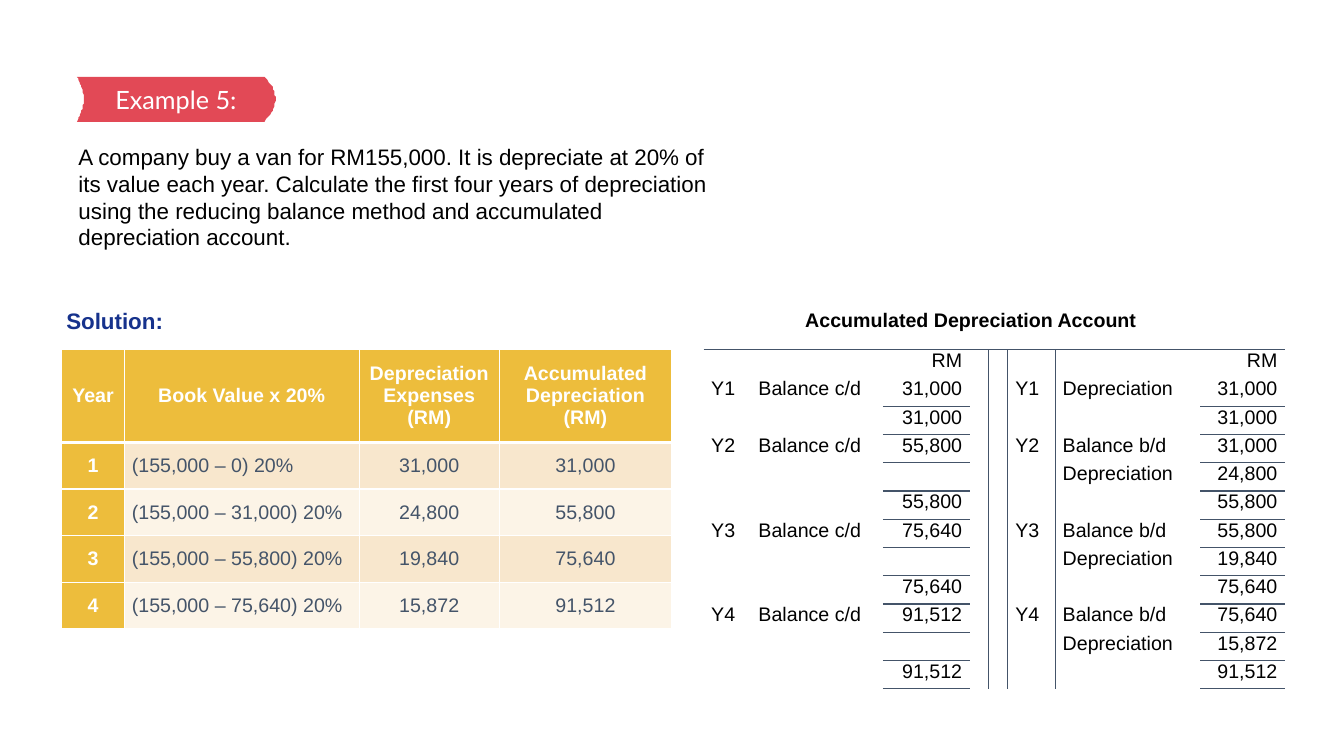
from lxml.etree import SubElement
from pptx import Presentation
from pptx.dml.color import RGBColor
from pptx.enum.text import MSO_ANCHOR, PP_ALIGN
from pptx.oxml.ns import qn
from pptx.util import Pt

COLORS = {"red": "E24956", "gold": "EDBD3C", "sand": "F8E7CD", "cream": "FCF4E7",
          "slate": "445469", "navy": "16328C", "white": "FFFFFF", "black": "000000"}
LEFT, CENTER, RIGHT = PP_ALIGN.LEFT, PP_ALIGN.CENTER, PP_ALIGN.RIGHT
PLAIN_STYLE = "{2D5ABB26-0587-4C30-8999-92F81FD0307C}"

TITLE = "Example 5:"
QUESTION = ("A company buy a van for RM155,000. It is depreciate at 20% of its value each year. "
            "Calculate the first four years of depreciation using the reducing balance method "
            "and accumulated depreciation account.")
SOLUTION = "Solution:"
ACCOUNT = "Accumulated Depreciation Account"
SCHEDULE = [
    ("Year", "Book Value x 20%", "Depreciation Expenses (RM)", "Accumulated Depreciation (RM)"),
    ("1", "(155,000 – 0) 20%", "31,000", "31,000"),
    ("2", "(155,000 – 31,000) 20%", "24,800", "55,800"),
    ("3", "(155,000 – 55,800) 20%", "19,840", "75,640"),
    ("4", "(155,000 – 75,640) 20%", "15,872", "91,512"),
]
DEBIT = [
    ("", "", "RM"),
    ("Y1", "Balance c/d", "31,000"), ("", "", "31,000"),
    ("Y2", "Balance c/d", "55,800"), ("", "", ""), ("", "", "55,800"),
    ("Y3", "Balance c/d", "75,640"), ("", "", ""), ("", "", "75,640"),
    ("Y4", "Balance c/d", "91,512"), ("", "", ""), ("", "", "91,512"),
]
CREDIT = [
    ("", "", "RM"),
    ("Y1", "Depreciation", "31,000"), ("", "", "31,000"),
    ("Y2", "Balance b/d", "31,000"), ("", "Depreciation", "24,800"), ("", "", "55,800"),
    ("Y3", "Balance b/d", "55,800"), ("", "Depreciation", "19,840"), ("", "", "75,640"),
    ("Y4", "Balance b/d", "75,640"), ("", "Depreciation", "15,872"), ("", "", "91,512"),
]
LEDGER = [debit + ("", "") + credit for debit, credit in zip(DEBIT, CREDIT)]
SCHEDULE_WIDTHS = [44.6, 167.8, 100.1, 123.1]
SCHEDULE_HEIGHTS = [66.2] + [33.3] * 4
LEDGER_WIDTHS = [33.8, 94.3, 62, 13.6, 13.6, 33.8, 103.7, 60.5]
LEDGER_HEIGHTS = [20.2] * len(LEDGER)
AMOUNT_COLUMNS = (2, 7)


def color(name):
    return RGBColor.from_string(COLORS[name])


def write(para, text, size, tone, bold=False, align=LEFT, face="Arial"):
    para.alignment = align
    span = para.add_run()
    span.text = text
    span.font.name, span.font.size, span.font.bold = face, Pt(size), bold
    span.font.color.rgb = color(tone)


def place_text(page, text, left, top, width, height, size, tone, bold=False, fill=None):
    box = page.shapes.add_textbox(Pt(left), Pt(top), Pt(width), Pt(height))
    if fill:
        box.fill.solid()
        box.fill.fore_color.rgb = color(fill)
    box.text_frame.word_wrap = True
    write(box.text_frame.paragraphs[0], text, size, tone, bold)


def set_border(cell, side, tone, width):
    properties = cell._tc.get_or_add_tcPr()
    line = SubElement(properties, qn("a:ln" + side), w=str(Pt(width)))
    solid = SubElement(line, qn("a:solidFill"))
    SubElement(solid, qn("a:srgbClr"), val=COLORS[tone])


def place_table(page, rows, left, top, widths, heights):
    frame = page.shapes.add_table(len(rows), len(widths), Pt(left), Pt(top),
                                  Pt(sum(widths)), Pt(sum(heights)))
    table = frame.table
    table._tbl.tblPr.find(qn("a:tableStyleId")).text = PLAIN_STYLE
    table.horz_banding = False
    for column, width in zip(table.columns, widths):
        column.width = Pt(width)
    for row, height in zip(table.rows, heights):
        row.height = Pt(height)
    for cell in table.iter_cells():
        cell.margin_left = cell.margin_right = Pt(5.4)
        cell.margin_top = cell.margin_bottom = 0
    return table


def place_schedule(page):
    table = place_table(page, SCHEDULE, 44.2, 249.8, SCHEDULE_WIDTHS, SCHEDULE_HEIGHTS)
    for r, row in enumerate(SCHEDULE):
        for c, text in enumerate(row):
            cell = table.cell(r, c)
            heading = r == 0 or c == 0
            for side in "LRTB":
                thick = (r == 0 and side == "B") or (r == 1 and side == "T")
                set_border(cell, side, "white", 3 if thick else 1)
            cell.fill.solid()
            cell.fill.fore_color.rgb = color("gold" if heading else "sand" if r % 2 else "cream")
            cell.vertical_anchor = MSO_ANCHOR.MIDDLE
            write(cell.text_frame.paragraphs[0], text, 14, "white" if heading else "slate",
                  heading, CENTER if heading or c > 1 else LEFT)


def place_ledger(page):
    table = place_table(page, LEDGER, 502.6, 249.8, LEDGER_WIDTHS, LEDGER_HEIGHTS)
    for r, row in enumerate(LEDGER):
        for c, text in enumerate(row):
            cell = table.cell(r, c)
            amount = c in AMOUNT_COLUMNS
            lines = {"L": c in (4, 5), "R": c in (3, 4),
                     "T": r == 0 or (amount and r > 1), "B": amount and r > 0}
            for side, drawn in lines.items():
                if drawn:
                    set_border(cell, side, "slate", 1)
            cell.fill.background()
            para = cell.text_frame.paragraphs[0]
            if text:
                write(para, text, 14, "black", align=RIGHT if amount else LEFT)
            else:
                SubElement(para._p, qn("a:endParaRPr"), sz="1400")


def curve(start, first, second, end, steps=12):
    def blend(a, b, c, d, t):
        u = 1 - t
        return u**3 * a + 3 * u * u * t * b + 3 * u * t * t * c + t**3 * d
    return [tuple(blend(*values, step / steps) for values in zip(start, first, second, end))
            for step in range(steps + 1)]


def place_banner(page):
    left, right, top, bottom = 54.8, 189.4, 54.8, 86.6
    middle = (top + bottom) / 2

    def arc(x, bulge):
        return (curve((x, top), (x + bulge * 0.6, top + 5), (x + bulge, top + 10), (x + bulge, middle))
                + curve((x + bulge, middle), (x + bulge, bottom - 10),
                        (x + bulge * 0.6, bottom - 5), (x, bottom)))

    outline = arc(right, 7.2) + arc(left, 5)[::-1]
    builder = page.shapes.build_freeform(*outline[0], scale=Pt(1))
    builder.add_line_segments(outline[1:], close=True)
    banner = builder.convert_to_shape()
    banner.shadow.inherit = False
    banner.fill.solid()
    banner.fill.fore_color.rgb = color("red")
    banner.line.fill.background()

    title = page.shapes.title
    title.left, title.top = Pt(left), Pt(top)
    title.width, title.height = Pt(141.8), Pt(bottom - top)
    title.text_frame.vertical_anchor = MSO_ANCHOR.MIDDLE
    write(title.text_frame.paragraphs[0], TITLE, 18, "white", align=CENTER, face="Lato")
    banner._element.addnext(title._element)


def main():
    deck = Presentation()
    deck.slide_width, deck.slide_height = Pt(960), Pt(540)
    page = deck.slides.add_slide(deck.slide_layouts[5])
    place_schedule(page)
    place_ledger(page)
    place_text(page, QUESTION, 49, 98.6, 472.3, 104.4, 16, "black", fill="white")
    place_banner(page)
    place_text(page, ACCOUNT, 568.1, 216.7, 258.5, 24.5, 14, "black", True, "white")
    place_text(page, SOLUTION, 40.3, 216, 84.2, 26.6, 16, "navy", True)
    deck.save("out.pptx")


if __name__ == "__main__":
    main()
